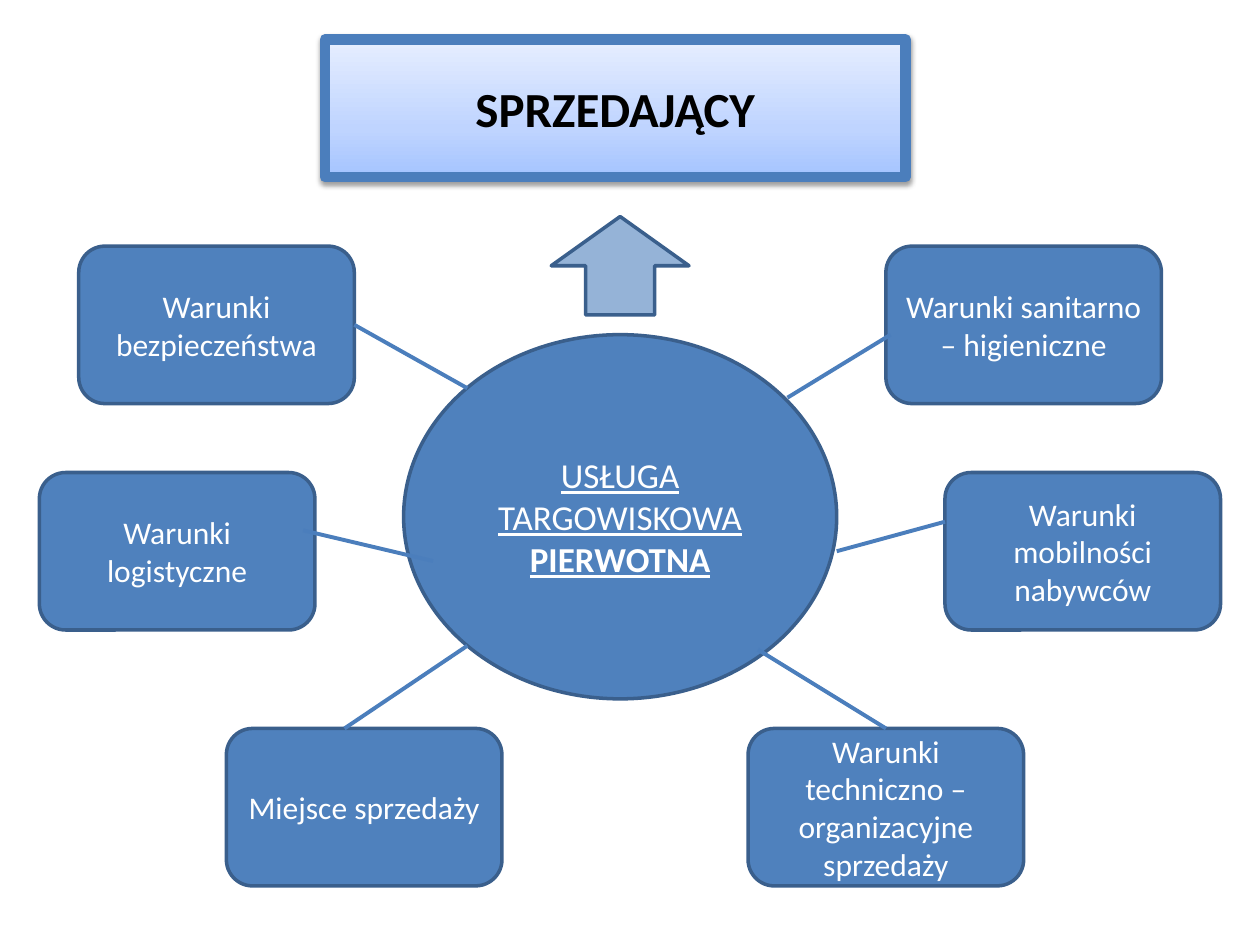
"""Build the slide on the seller's primary market service and its conditions."""
from lxml.etree import SubElement
from copy import deepcopy
from pptx import Presentation
from pptx.dml.color import RGBColor
from pptx.enum.shapes import MSO_CONNECTOR, MSO_SHAPE
from pptx.enum.text import MSO_ANCHOR, PP_ALIGN
from pptx.oxml.ns import qn
from pptx.util import Inches, Pt

HUES = {"blue": "4F81BD", "edge": "3A5F8C", "link": "4B7EBC", "pale": "95B3D7",
        "white": "FFFFFF", "black": "000000",
        "low": "A4C4FF", "mid": "BFD4FF", "high": "E6EEFF"}

deck = Presentation()
deck.slide_width, deck.slide_height = Inches(10), Inches(7.5)
slide = deck.slides.add_slide(deck.slide_layouts[6])
cell = deck.slide_width / 32


def grid(*spots):
    return [round(spot * cell) for spot in spots]


def draw(kind, spot, lines=(), hue="white", fill="blue", **font):
    shape = slide.shapes.add_shape(kind, *grid(*spot))
    shape.shadow.inherit = False
    shape.fill.solid()
    shape.fill.fore_color.rgb = RGBColor.from_string(HUES[fill])
    shape.line.color.rgb = RGBColor.from_string(HUES["edge"])
    shape.line.width = Pt(2)
    frame = shape.text_frame
    frame.word_wrap = True
    frame.vertical_anchor = MSO_ANCHOR.MIDDLE
    for row, (text, bold) in enumerate(lines):
        para = frame.add_paragraph() if row else frame.paragraphs[0]
        para.alignment = PP_ALIGN.CENTER
        run = para.add_run()
        run.text = text
        run.font.color.rgb = RGBColor.from_string(HUES[hue])
        for name, value in {"name": "Calibri", "bold": bold, **font}.items():
            setattr(run.font, name, value)
    return shape


draw(MSO_SHAPE.OVAL, (10.25, 8.5, 11, 9.25),
     [("USŁUGA TARGOWISKOWA", False), ("PIERWOTNA", True)],
     size=Pt(20), underline=True)

terms = [
    (2, 6.25, "Warunki bezpieczeństwa"),
    (1, 12, "Warunki logistyczne"),
    (24, 12, "Warunki mobilności nabywców"),
    (22.5, 6.25, "Warunki sanitarno – higieniczne"),
    (5.75, 18.5, "Miejsce sprzedaży"),
    (19, 18.5, "Warunki techniczno – organizacyjne sprzedaży"),
]
for left, top, text in terms:
    draw(MSO_SHAPE.ROUNDED_RECTANGLE, (left, top, 7, 4), [(text, False)], size=Pt(18))

title = draw(MSO_SHAPE.RECTANGLE, (8.25, 1, 14.75, 3.5),
             [("SPRZEDAJĄCY", True)], hue="black", size=Pt(28))
title.line.color.rgb = RGBColor.from_string(HUES["link"])
title.line.width = Pt(6)
title.fill.gradient()
title.fill.gradient_angle = 90
stops = title._element.spPr.find(qn("a:gradFill")).find(qn("a:gsLst"))
stops.append(deepcopy(stops[-1]))
shades = [("low", 0), ("mid", 0.35), ("high", 1)]
for stop, (hue, place) in zip(title.fill.gradient_stops, shades):
    stop.color.rgb = RGBColor.from_string(HUES[hue])
    stop.position = place
glow = SubElement(title._element.spPr.find(qn("a:effectLst")), qn("a:outerShdw"),
                  blurRad=str(Pt(3.1)), dist=str(Pt(1.6)), dir="5400000", rotWithShape="0")
shade = SubElement(glow, qn("a:srgbClr"), val=HUES["black"])
SubElement(shade, qn("a:alpha"), val="38000")

draw(MSO_SHAPE.UP_ARROW, (14, 5.5, 3.5, 2.5), fill="pale")

links = [
    (9, 8.25, 11.87, 9.86),
    (22.62, 8.5, 20, 10.1),
    (24, 13.25, 21.25, 14),
    (7.7, 13.47, 11, 14.25),
    (22.5, 18.5, 19.25, 16.5),
    (8.75, 18.5, 11.87, 16.4),
]
for ends in links:
    link = slide.shapes.add_connector(MSO_CONNECTOR.STRAIGHT, *grid(*ends))
    link.line.color.rgb = RGBColor.from_string(HUES["link"])
    link.line.width = Pt(2.25)
    SubElement(link._element.spPr, qn("a:effectLst"))

deck.save("out.pptx")
